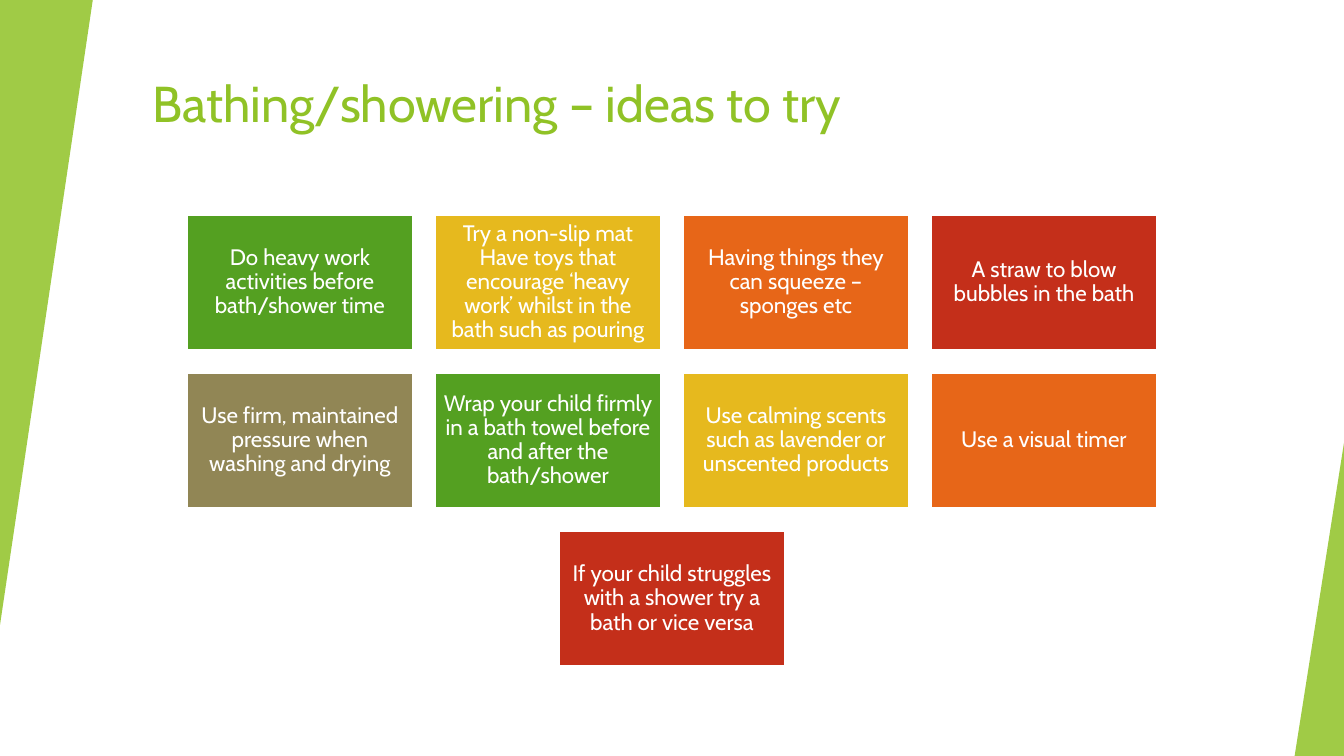
"""Build the slide of bathing and showering ideas."""
from dataclasses import dataclass
from itertools import cycle

from lxml import etree
from pptx import Presentation
from pptx import util as u
from pptx.dml.color import RGBColor
from pptx.enum import shapes, text
from pptx.oxml import ns

LIME = RGBColor(0x90, 0xC2, 0x26)
GREEN = RGBColor(0x54, 0xA0, 0x21)
GOLD = RGBColor(0xE6, 0xB9, 0x1E)
AMBER = RGBColor(0xE7, 0x66, 0x18)
RED = RGBColor(0xC4, 0x2F, 0x1A)
OLIVE = RGBColor(0x91, 0x86, 0x55)
WHITE = RGBColor(0xFF, 0xFF, 0xFF)

FONT = "Cabin"
WIDE, HIGH = 13.33, 7.5
TILE_W, TILE_H = 2.24, 1.34
COL, ROW = 2.46, 1.57
TOP = 2.13
INSET = 0.07

IDEAS = (
    (
        "Do heavy work activities before bath/shower time",
        "Try a non-slip mat Have toys that encourage ‘heavy work’ "
        "whilst in the bath such as pouring",
        "Having things they can squeeze – sponges etc",
        "A straw to blow bubbles in the bath",
    ),
    (
        "Use firm, maintained pressure when washing and drying",
        "Wrap your child firmly in a bath towel before and after the bath/shower",
        "Use calming scents such as lavender or unscented products",
        "Use a visual timer",
    ),
    ("If your child struggles with a shower try a bath or vice versa",),
)


@dataclass(frozen=True)
class Box:
    """Hold a place on the slide in inches."""

    left: float
    top: float
    width: float
    height: float

    def emu(self) -> tuple[u.Inches, ...]:
        """Return the four lengths in slide units."""
        return tuple(u.Inches(n) for n in (self.left, self.top, self.width, self.height))


@dataclass(frozen=True)
class Wedge:
    """Hold a corner triangle and its turn in degrees."""

    box: Box
    turn: int


@dataclass(frozen=True)
class Tile:
    """Hold one idea with its place and fill."""

    words: str
    box: Box
    fill: RGBColor


WEDGES = (
    Wedge(Box(0, 0, 0.92, 6.2), 180),
    Wedge(Box(WIDE - 0.49, HIGH - 3.11, 0.49, 3.11), 0),
)


def plan() -> list[Tile]:
    """Centre each row of ideas and give out the fills in turn."""
    fills = cycle((GREEN, GOLD, AMBER, RED, OLIVE))
    tiles = []
    for row, ideas in enumerate(IDEAS):
        left = (WIDE - TILE_W - COL * (len(ideas) - 1)) / 2
        for col, words in enumerate(ideas):
            box = Box(left + col * COL, TOP + row * ROW, TILE_W, TILE_H)
            tiles.append(Tile(words, box, next(fills)))
    return tiles


def add_title(slide, words: str) -> None:
    """Place and format the title."""
    title = slide.shapes.title
    title.left, title.top, title.width, title.height = Box(1.41, 0.67, 11.15, 1.2).emu()
    frame = title.text_frame
    frame.text = words
    frame.vertical_anchor = text.MSO_ANCHOR.TOP
    para = frame.paragraphs[0]
    para.alignment = text.PP_ALIGN.LEFT
    para.font.name, para.font.size = FONT, u.Pt(36)
    para.font.color.rgb = LIME


def add_wedge(slide, wedge: Wedge) -> None:
    """Draw a see-through corner triangle."""
    shape = slide.shapes.add_shape(
        shapes.MSO_SHAPE.ISOSCELES_TRIANGLE, *wedge.box.emu()
    )
    shape.adjustments[0] = 1
    shape.rotation = wedge.turn
    shape.shadow.inherit = False
    shape.line.fill.background()
    shape.fill.solid()
    shape.fill.fore_color.rgb = LIME
    tint = shape.fill._xPr.find(".//" + ns.qn("a:srgbClr"))
    etree.SubElement(tint, ns.qn("a:alpha"), val="85000")


def add_tile(slide, tile: Tile) -> None:
    """Draw one idea as a filled box with centred words."""
    shape = slide.shapes.add_shape(shapes.MSO_SHAPE.RECTANGLE, *tile.box.emu())
    shape.shadow.inherit = False
    shape.fill.solid()
    shape.fill.fore_color.rgb = tile.fill
    shape.line.color.rgb = WHITE
    shape.line.width = u.Pt(1.5)
    frame = shape.text_frame
    frame.word_wrap = True
    frame.vertical_anchor = text.MSO_ANCHOR.MIDDLE
    frame.margin_left = frame.margin_right = u.Inches(INSET)
    frame.margin_top = frame.margin_bottom = u.Inches(INSET)
    frame.text = tile.words
    para = frame.paragraphs[0]
    para.alignment = text.PP_ALIGN.CENTER
    para.line_spacing = 0.9
    para.font.name, para.font.size = FONT, u.Pt(16)
    para.font.color.rgb = WHITE


def main() -> None:
    """Build and save the slide."""
    deck = Presentation()
    deck.slide_width, deck.slide_height = u.Inches(WIDE), u.Inches(HIGH)
    slide = deck.slides.add_slide(deck.slide_layouts.get_by_name("Title Only"))
    add_title(slide, "Bathing/showering – ideas to try")
    for wedge in WEDGES:
        add_wedge(slide, wedge)
    for tile in plan():
        add_tile(slide, tile)
    deck.save("out.pptx")


if __name__ == "__main__":
    main()
